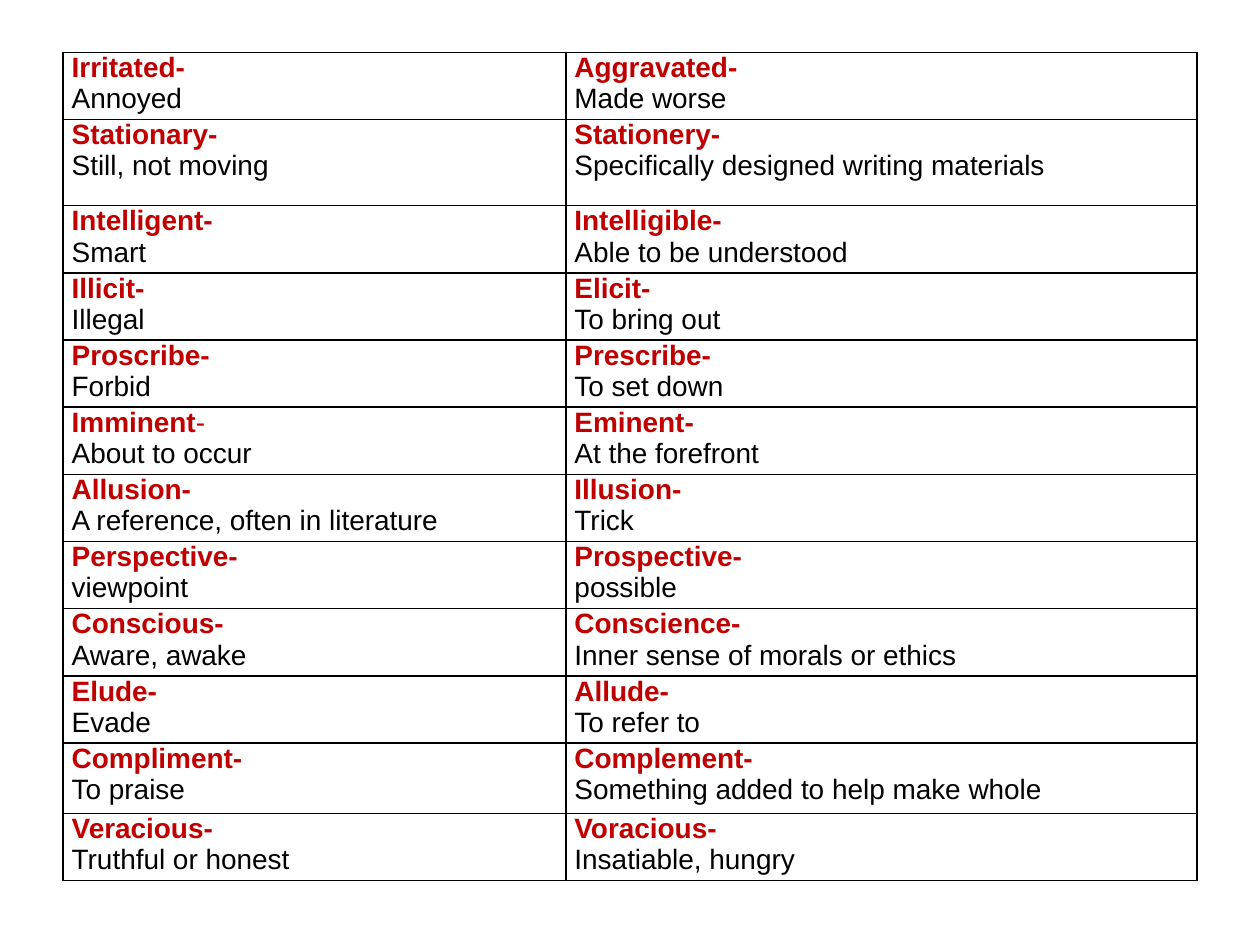
from lxml import etree
from pptx import Presentation
from pptx import util as u
from pptx.dml import color
from pptx.oxml import ns

COLORS = {"term": "C00000", "text": "000000", "line": "000000"}
FONT = "Arial"
SIZE = 16
COLS = [287.3, 360.7]
ROW = 38.4
TALL = {1: 49.2, 10: 40.3}
LIGHT = {"Imminent"}
PAIRS = [
    (("Irritated", "Annoyed"), ("Aggravated", "Made worse")),
    (("Stationary", "Still, not moving"),
     ("Stationery", "Specifically designed writing materials")),
    (("Intelligent", "Smart"), ("Intelligible", "Able to be understood")),
    (("Illicit", "Illegal"), ("Elicit", "To bring out")),
    (("Proscribe", "Forbid"), ("Prescribe", "To set down")),
    (("Imminent", "About to occur"), ("Eminent", "At the forefront")),
    (("Allusion", "A reference, often in literature"), ("Illusion", "Trick")),
    (("Perspective", "viewpoint"), ("Prospective", "possible")),
    (("Conscious", "Aware, awake"),
     ("Conscience", "Inner sense of morals or ethics")),
    (("Elude", "Evade"), ("Allude", "To refer to")),
    (("Compliment", "To praise"),
     ("Complement", "Something added to help make whole")),
    (("Veracious", "Truthful or honest"), ("Voracious", "Insatiable, hungry")),
]


def add_run(para, words, hue, bold=False):
    run = para.add_run()
    run.text = words
    font = run.font
    font.name, font.size, font.bold = FONT, u.Pt(SIZE), bold
    font.color.rgb = color.RGBColor.from_string(COLORS[hue])


def add_edges(cell):
    props = cell._tc.get_or_add_tcPr()
    for side in ("lnL", "lnR", "lnT", "lnB"):
        line = etree.SubElement(props, ns.qn("a:" + side), w=str(u.Pt(1)))
        fill = etree.SubElement(line, ns.qn("a:solidFill"))
        etree.SubElement(fill, ns.qn("a:srgbClr"), val=COLORS["line"])


def fill_cell(cell, term, sense):
    cell.margin_left = cell.margin_right = u.Pt(5)
    cell.margin_top = cell.margin_bottom = 0
    add_edges(cell)
    cell.fill.background()
    frame = cell.text_frame
    head = frame.paragraphs[0]
    if term in LIGHT:
        add_run(head, term, "term", True)
        add_run(head, "-", "term")
    else:
        add_run(head, term + "-", "term", True)
    add_run(frame.add_paragraph(), sense, "text")


def add_grid(slide):
    highs = [TALL.get(i, ROW) for i in range(len(PAIRS))]
    grid = slide.shapes.add_table(
        len(PAIRS), len(COLS), u.Pt(36), u.Pt(30),
        u.Pt(sum(COLS)), u.Pt(sum(highs))).table
    grid.first_row = grid.horz_banding = False
    for col, wide in zip(grid.columns, COLS):
        col.width = u.Pt(wide)
    for row, high, pair in zip(grid.rows, highs, PAIRS):
        row.height = u.Pt(high)
        for cell, (term, sense) in zip(row.cells, pair):
            fill_cell(cell, term, sense)


def main():
    deck = Presentation()
    deck.slide_width, deck.slide_height = u.Pt(720), u.Pt(540)
    add_grid(deck.slides.add_slide(deck.slide_layouts[6]))
    deck.save("out.pptx")


if __name__ == "__main__":
    main()
